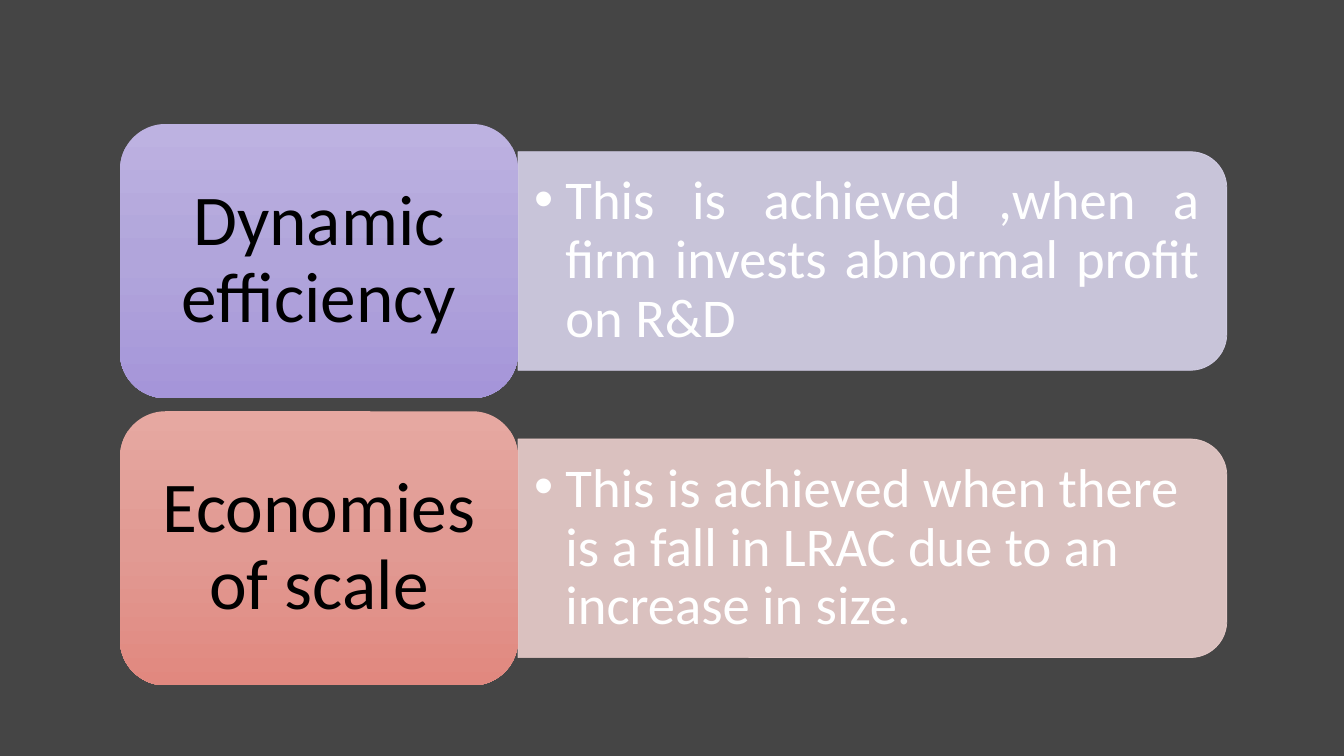
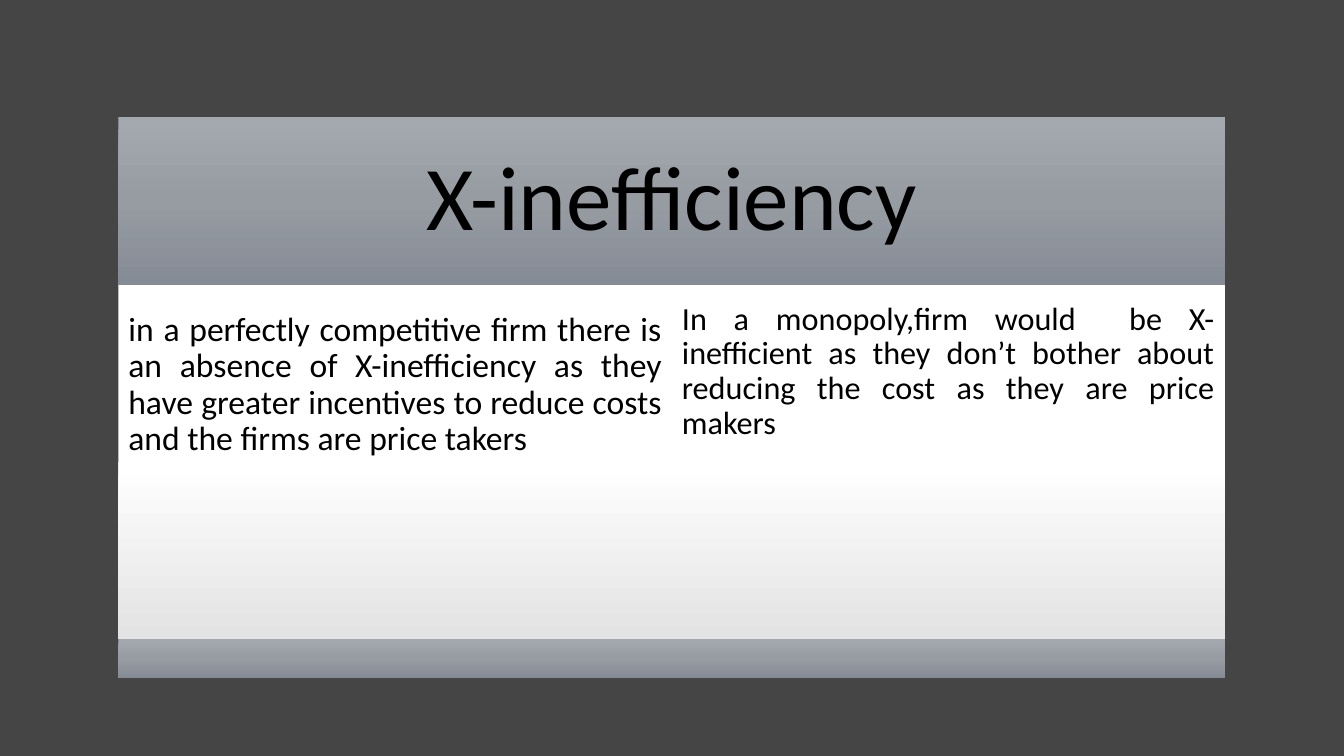
"""Build two slides on dynamic efficiency, economies of scale and X-inefficiency."""
from copy import deepcopy
from dataclasses import dataclass

from lxml.etree import SubElement
from pptx import Presentation
from pptx.dml.color import RGBColor
from pptx.enum.shapes import MSO_SHAPE as Preset
from pptx.enum.text import MSO_ANCHOR as Anchor, MSO_AUTO_SIZE as AutoSize, PP_ALIGN as Align
from pptx.oxml.ns import qn
from pptx.util import Inches, Pt

SLIDE_WIDTH, SLIDE_HEIGHT = Inches(13.33), Inches(7.5)
COLUMNS, ROWS = 160, 90
FONT = "Calibri"
COLOURS = {
    "background": "454545",
    "light": "FFFFFF",
    "dark": "000000",
    "violet bar": "D7D2EA",
    "rose bar": "EBCFCD",
}
GRADIENTS = {
    "violet": ("BDB2E1", "B1A5DB", "A595D9"),
    "rose": ("E6A8A1", "E19A93", "E1887F"),
    "slate": ("A4A8AF", "979CA3", "858B95"),
    "paper": ("FFFFFF", "FFFFFF", "E3E3E3"),
}


@dataclass(frozen=True)
class Area:
    """A rectangle in grid columns and rows."""

    left: float
    top: float
    width: float
    height: float

    def centred(self, width: float, height: float) -> "Area":
        """Return an area of the given size with the same centre."""
        return Area(self.left + (self.width - width) / 2,
                    self.top + (self.height - height) / 2, width, height)


@dataclass(frozen=True)
class Concept:
    """A heading with its explanation."""

    heading: str
    explanation: str
    palette: str
    align: Align


@dataclass(frozen=True)
class Panel:
    """A column of text under the title band."""

    text: str
    size: int
    top_inset: float


CONCEPTS = (
    Concept("Dynamic efficiency",
            "This is achieved ,when a firm invests abnormal profit on R&D",
            "violet", Align.JUSTIFY),
    Concept("Economies of scale",
            "This is achieved when there is a fall in LRAC due to an increase in size.",
            "rose", Align.LEFT),
)
PANELS = (
    Panel("in a perfectly competitive firm there is an absence of X-inefficiency as they "
          "have greater incentives to reduce costs and the firms are price takers", 24, 0.27),
    Panel("In a monopoly,firm would  be X-inefficient as they don’t bother about "
          "reducing the cost as they are price makers", 23, 0.17),
)

HEADING = Area(14.28, 14.76, 47.4, 32.64)
CONCEPT_PITCH = 34.2
BAR_WIDTH, BAR_HEIGHT = 84.36, 26.04
EXPLANATION_WIDTH, EXPLANATION_HEIGHT = 83.04, 23.52
TITLE_BAND = Area(14.08, 13.92, 131.8, 20.04)
PANEL_HEIGHT, FOOTER_HEIGHT = 42.12, 4.68


def place(shape, area: Area) -> None:
    """Move a shape to an area of the grid."""
    shape.left = round(area.left * SLIDE_WIDTH / COLUMNS)
    shape.top = round(area.top * SLIDE_HEIGHT / ROWS)
    shape.width = round(area.width * SLIDE_WIDTH / COLUMNS)
    shape.height = round(area.height * SLIDE_HEIGHT / ROWS)


def add_preset(slide, preset: Preset, area: Area):
    """Add a preset shape without shadow or outline."""
    shape = slide.shapes.add_shape(preset, 0, 0, 0, 0)
    place(shape, area)
    shape.shadow.inherit = False
    shape.line.fill.background()
    return shape


def fill_gradient(shape, palette: str) -> None:
    """Fill a shape with a three-stop gradient from top to bottom."""
    shape.fill.gradient()
    shape.fill.gradient_angle = 270
    stop_list = shape.element.spPr.find(".//" + qn("a:gsLst"))
    stop_list.append(deepcopy(stop_list[-1]))
    for index, (stop, colour) in enumerate(zip(shape.fill.gradient_stops, GRADIENTS[palette])):
        stop.color.rgb = RGBColor.from_string(colour)
        stop.position = index / 2


def add_bar(slide, area: Area, colour: str) -> None:
    """Add a translucent bar rounded on its right side."""
    bar = add_preset(slide, Preset.ROUND_2_SAME_RECTANGLE,
                     area.centred(area.height, area.width))
    bar.rotation = 90
    bar.fill.solid()
    bar.line.width = Pt(0.5)
    for color in (bar.fill.fore_color, bar.line.color):
        color.rgb = RGBColor.from_string(COLOURS[colour])
    for element in bar.element.spPr.iter(qn("a:srgbClr")):
        SubElement(element, qn("a:alpha"), val="90000")


def write(shape, text: str, *, size: int, colour: str = "dark", align: Align = Align.CENTER,
          anchor: Anchor = Anchor.MIDDLE, insets: tuple = (0.1, 0.1), bullet: bool = False) -> None:
    """Write one formatted paragraph in a shape."""
    frame = shape.text_frame
    frame.text = text
    frame.word_wrap = True
    frame.auto_size = AutoSize.NONE
    frame.vertical_anchor = anchor
    frame.margin_left = frame.margin_right = Inches(insets[0])
    frame.margin_top = frame.margin_bottom = Inches(insets[1])
    paragraph = frame.paragraphs[0]
    paragraph.alignment = align
    paragraph.line_spacing = 0.9
    paragraph.space_before = paragraph.space_after = Pt(0)
    font = paragraph.runs[0].font
    font.name, font.size = FONT, Pt(size)
    font.color.rgb = RGBColor.from_string(COLOURS[colour])
    properties = paragraph._p.get_or_add_pPr()
    indent = Inches(0.31) if bullet else 0
    properties.set("marL", str(indent))
    properties.set("indent", str(-indent))
    if bullet:
        SubElement(properties, qn("a:buChar"), char="•")
    else:
        SubElement(properties, qn("a:buNone"))


def add_concept(slide, body, concept: Concept, row: int) -> None:
    """Draw a heading box with its explanation bar."""
    heading_area = Area(HEADING.left, HEADING.top + row * CONCEPT_PITCH,
                        HEADING.width, HEADING.height)
    bar_area = Area(HEADING.left + HEADING.width, heading_area.top,
                    BAR_WIDTH, HEADING.height).centred(BAR_WIDTH, BAR_HEIGHT)
    add_bar(slide, bar_area, f"{concept.palette} bar")
    text_area = bar_area.centred(BAR_WIDTH, EXPLANATION_HEIGHT)
    place(body, Area(text_area.left, text_area.top, EXPLANATION_WIDTH, EXPLANATION_HEIGHT))
    write(body, concept.explanation, size=39, colour="light", align=concept.align,
          insets=(0.16, 0.08), bullet=True)
    body.element.getparent().append(body.element)
    heading = add_preset(slide, Preset.ROUNDED_RECTANGLE, heading_area)
    fill_gradient(heading, concept.palette)
    write(heading, concept.heading, size=51, insets=(0.21, 0.11))


def build_concepts(slide) -> None:
    """Build the slide with two headings and explanations."""
    title, *bodies = slide.placeholders
    title.element.getparent().remove(title.element)
    for row, (body, concept) in enumerate(zip(bodies, CONCEPTS)):
        add_concept(slide, body, concept, row)


def build_comparison(slide) -> None:
    """Build the slide with a title band, two panels and a footer band."""
    title, *bodies = slide.placeholders
    place(title, TITLE_BAND)
    fill_gradient(title, "slate")
    write(title, "X-inefficiency", size=65, insets=(0.27, 0.27))
    panel_top = TITLE_BAND.top + TITLE_BAND.height
    panel_width = TITLE_BAND.width / len(PANELS)
    for column, (body, panel) in enumerate(zip(bodies, PANELS)):
        place(body, Area(TITLE_BAND.left + column * panel_width, panel_top,
                         panel_width, PANEL_HEIGHT))
        fill_gradient(body, "paper")
        write(body, panel.text, size=panel.size, align=Align.JUSTIFY, anchor=Anchor.TOP,
              insets=(0.1, panel.top_inset))
    footer = add_preset(slide, Preset.RECTANGLE,
                        Area(TITLE_BAND.left, panel_top + PANEL_HEIGHT,
                             TITLE_BAND.width, FOOTER_HEIGHT))
    fill_gradient(footer, "slate")


def main() -> None:
    """Build and save the presentation."""
    presentation = Presentation()
    presentation.slide_width, presentation.slide_height = SLIDE_WIDTH, SLIDE_HEIGHT
    background = presentation.slide_master.background.fill
    background.solid()
    background.fore_color.rgb = RGBColor.from_string(COLOURS["background"])
    layout = presentation.slide_layouts.get_by_name("Two Content")
    for build in (build_concepts, build_comparison):
        build(presentation.slides.add_slide(layout))
    presentation.save("out.pptx")


if __name__ == "__main__":
    main()
